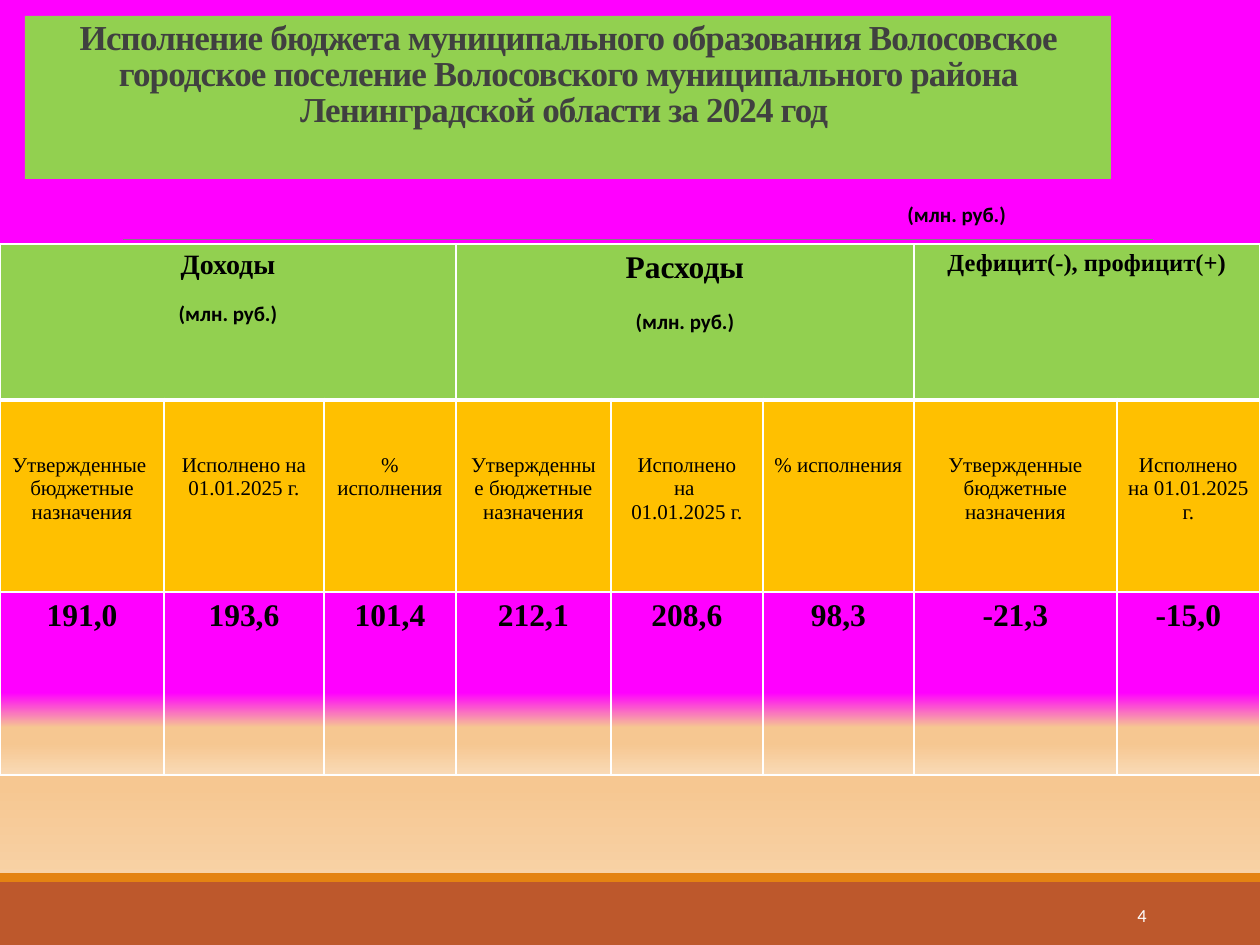
from dataclasses import dataclass

from lxml.etree import SubElement
from pptx import Presentation
from pptx.dml.color import RGBColor
from pptx.enum.shapes import MSO_CONNECTOR, MSO_SHAPE
from pptx.enum.text import MSO_ANCHOR, MSO_AUTO_SIZE, PP_ALIGN
from pptx.oxml.ns import qn
from pptx.util import Emu, Pt


@dataclass(frozen=True)
class Theme:
    serif: str = "Times New Roman"
    sans: str = "Calibri"
    green: str = "92D050"
    amber: str = "FFC000"
    rust: str = "BD582C"
    orange: str = "E48312"
    gray: str = "808080"
    dark: str = "404040"
    black: str = "000000"
    white: str = "FFFFFF"
    gradient: tuple = ((55, "FF00FF"), (74, "F6C791"), (83, "F6C791"), (100, "F9DAB6"))
    title: float = 20
    large: float = 18
    medium: float = 16
    small: float = 14
    body: float = 12
    number: float = 10.5


@dataclass(frozen=True)
class Line:
    text: str
    size: float
    font: str
    color: str = Theme.black
    bold: bool = False
    before: float = 0
    spacing: float = 1
    tracking: int = 0


def px(length):
    return Emu(round(length * 914400 / 126))


class SlideBuilder:
    """Draws themed elements on the current slide."""

    def __init__(self, slide, theme):
        self.slide = slide
        self.theme = theme

    def gradient(self, fill, owner):
        fill.gradient()
        gradient_fill = owner.find(".//" + qn("a:gradFill"))
        for child in list(gradient_fill):
            gradient_fill.remove(child)
        stops = SubElement(gradient_fill, qn("a:gsLst"))
        for position, color in self.theme.gradient:
            stop = SubElement(stops, qn("a:gs"), pos=str(position * 1000))
            SubElement(stop, qn("a:srgbClr"), val=color)
        SubElement(gradient_fill, qn("a:lin"), ang="5400000", scaled="0")

    def background(self):
        self.gradient(self.slide.background.fill, self.slide.element)

    def add_lines(self, frame, lines, align=PP_ALIGN.CENTER):
        frame.word_wrap = True
        for index, line in enumerate(lines):
            paragraph = frame.add_paragraph() if index else frame.paragraphs[0]
            paragraph.alignment = align
            paragraph.line_spacing = line.spacing
            paragraph.space_before = Pt(line.before)
            run = paragraph.add_run()
            run.text = line.text
            run.font.size = Pt(line.size)
            run.font.name = line.font
            run.font.bold = line.bold
            run.font.color.rgb = RGBColor.from_string(line.color)
            if line.tracking:
                run.font._element.set("spc", str(line.tracking))

    def rectangle(self, left, top, width, height, color):
        shape = self.slide.shapes.add_shape(
            MSO_SHAPE.RECTANGLE, px(left), px(top), px(width), px(height))
        shape.shadow.inherit = False
        shape.fill.solid()
        shape.fill.fore_color.rgb = RGBColor.from_string(color)
        shape.line.fill.background()
        return shape

    def rule(self, left, right, top):
        connector = self.slide.shapes.add_connector(
            MSO_CONNECTOR.STRAIGHT, px(left), px(top), px(right), px(top))
        connector.line.color.rgb = RGBColor.from_string(self.theme.gray)
        connector.line.width = Pt(0.5)
        SubElement(connector._element.spPr, qn("a:effectLst"))

    def title(self, left, top, width, height, line):
        shape = self.rectangle(left, top, width, height, self.theme.green)
        shape.text_frame.vertical_anchor = MSO_ANCHOR.TOP
        self.add_lines(shape.text_frame, [line])

    def label(self, left, top, width, height, line, align, anchor):
        box = self.slide.shapes.add_textbox(px(left), px(top), px(width), px(height))
        self.add_lines(box.text_frame, [line], align)
        box.text_frame.vertical_anchor = anchor
        box.text_frame.auto_size = MSO_AUTO_SIZE.NONE

    def borders(self, cell, top, bottom):
        properties = cell._tc.get_or_add_tcPr()
        for side, width in (("L", 1), ("R", 1), ("T", top), ("B", bottom)):
            border = SubElement(properties, qn(f"a:ln{side}"), w=str(int(Pt(width))))
            fill = SubElement(border, qn("a:solidFill"))
            SubElement(fill, qn("a:srgbClr"), val=self.theme.white)

    def cell(self, cell, lines, color=None, margin_top=6):
        cell.margin_left = cell.margin_right = px(11)
        cell.margin_top, cell.margin_bottom = px(margin_top), px(6)
        if color:
            cell.fill.solid()
            cell.fill.fore_color.rgb = RGBColor.from_string(color)
        else:
            self.gradient(cell.fill, cell._tc)
        self.add_lines(cell.text_frame, lines)

    def budget_table(self, left, top, widths, heights, groups, headings, values):
        theme = self.theme
        table = self.slide.shapes.add_table(
            len(heights), len(widths), px(left), px(top),
            px(sum(widths)), px(sum(heights))).table
        table.first_row = table.horz_banding = False
        for column, width in zip(table.columns, widths):
            column.width = px(width)
        for row, height in zip(table.rows, heights):
            row.height = px(height)
        for row, (upper, lower) in zip(table.rows, ((1, 3), (3, 1), (1, 1))):
            for cell in row.cells:
                self.borders(cell, upper, lower)
        start = 0
        for span, lines in groups:
            table.cell(0, start).merge(table.cell(0, start + span - 1))
            self.cell(table.cell(0, start), lines, theme.green)
            start += span
        for column, (heading, value) in enumerate(zip(headings, values)):
            lines = [Line(text, theme.body, theme.serif) for text in heading]
            self.cell(table.cell(1, column), lines, theme.amber, margin_top=54)
            self.cell(table.cell(2, column), [Line(value, theme.large, theme.serif, bold=True)])


def main():
    theme = Theme()
    presentation = Presentation()
    presentation.slide_width, presentation.slide_height = px(1260), px(945)
    slide = presentation.slides.add_slide(presentation.slide_layouts[6])
    builder = SlideBuilder(slide, theme)
    unit = "(млн. руб.)"
    approved = ["Утвержденные бюджетные назначения"]
    executed = ["Исполнено на 01.01.2025 г."]
    percent = ["% исполнения"]

    builder.background()
    builder.rectangle(0, 882, 1260, 63, theme.rust)
    builder.rectangle(0, 873, 1260, 9, theme.orange)
    builder.rule(123, 1153, 239)
    builder.title(25, 16, 1086, 163, Line(
        "Исполнение бюджета муниципального образования Волосовское городское поселение "
        "Волосовского муниципального района Ленинградской области за 2024 год ",
        theme.title, theme.serif, theme.dark, True, spacing=0.85, tracking=-50))
    builder.budget_table(
        0, 244, [164, 160, 132, 155, 152, 151, 203, 143], [156, 192, 183],
        [(3, [Line("Доходы", theme.medium, theme.serif, bold=True),
              Line(unit, theme.body, theme.sans, bold=True, before=11.5)]),
         (3, [Line("Расходы", theme.large, theme.serif, bold=True),
              Line(unit, theme.body, theme.sans, bold=True, before=14)]),
         (2, [Line("Дефицит(-), профицит(+)", theme.small, theme.serif, bold=True)])],
        [["Утвержденные ", "бюджетные назначения"], executed, percent,
         approved, ["Исполнено", "на ", "01.01.2025 г."], percent, approved, executed],
        ["191,0", "193,6", "101,4", "212,1", "208,6", "98,3", "-21,3", "-15,0"])
    builder.label(1023, 890, 136, 50, Line("4", theme.number, theme.sans, theme.white),
                  PP_ALIGN.RIGHT, MSO_ANCHOR.MIDDLE)
    builder.label(895, 195, 247, 38, Line(unit, theme.body, theme.sans, bold=True),
                  PP_ALIGN.LEFT, MSO_ANCHOR.TOP)
    presentation.save("out.pptx")


if __name__ == "__main__":
    main()
